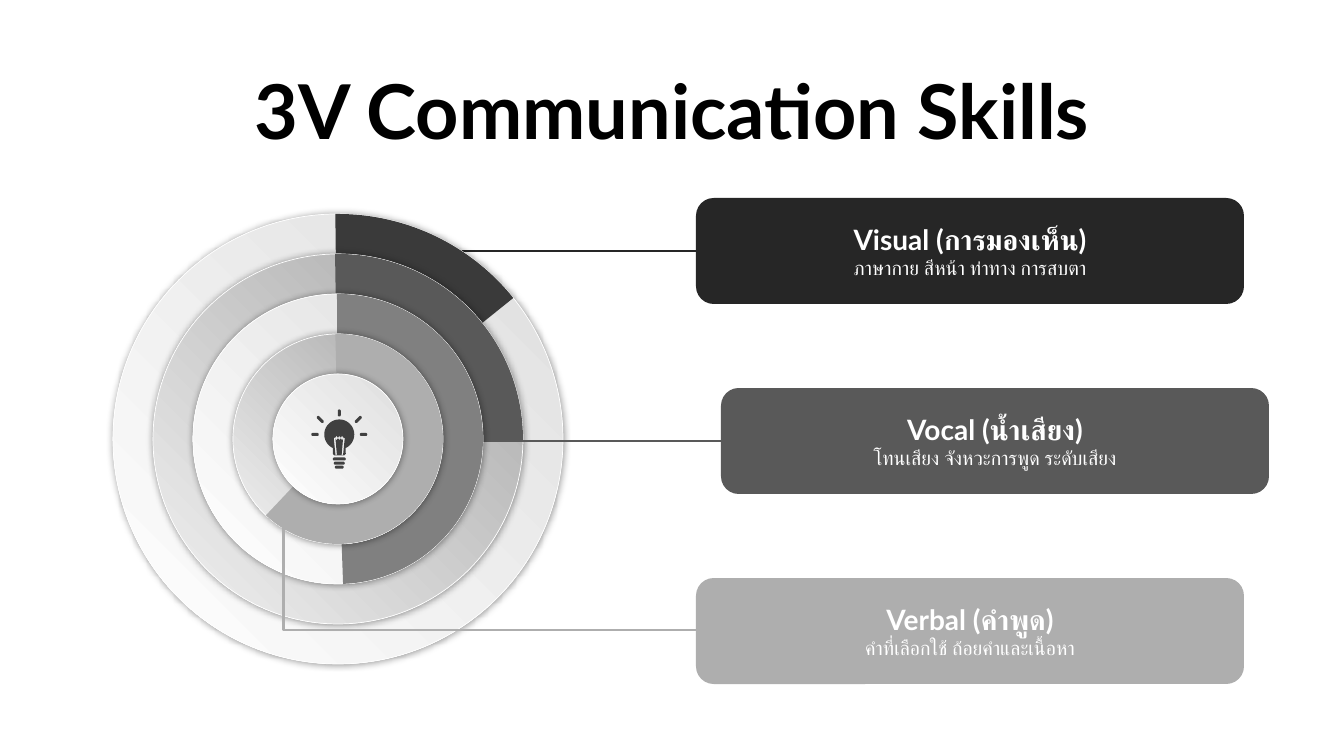
"""Build the 3V Communication Skills slide."""
from math import atan2, cos, degrees, radians, sin

from lxml.etree import SubElement
from pptx import Presentation
from pptx.dml.color import RGBColor
from pptx.enum.shapes import MSO_CONNECTOR, MSO_SHAPE
from pptx.enum.text import MSO_ANCHOR, PP_ALIGN
from pptx.oxml.ns import qn
from pptx.util import Pt

TITLE = "3V Communication Skills"
CARDS = [
    ("Visual (การมองเห็น)", "ภาษากาย สีหน้า ท่าทาง การสบตา", 696, "visual"),
    ("Vocal (น้ำเสียง)", "โทนเสียง จังหวะการพูด ระดับเสียง", 721, "vocal"),
    ("Verbal (คำพูด)", "คำที่เลือกใช้ ถ้อยคำและเนื้อหา", 696, "verbal"),
]
RINGS = [
    ("pale", "outer_pie", 269.33, 321.19),
    ("grey", "vocal", 269.1, 0.77),
    ("pale", "inner_pie", 269.61, 87.97),
    ("grey", "verbal", 268.59, 133.32),
    ("pale", None, 0, 0),
]
GRADIENTS = {"pale": ("pale_start", "white"), "grey": ("grey_start", "grey_end")}
COLORS = {
    "black": "000000", "white": "FFFFFF", "visual": "262626", "vocal": "595959",
    "verbal": "AEAEAE", "outer_pie": "3A3A3A", "inner_pie": "808080",
    "pale_start": "DEDEDE", "grey_start": "A6A6A6", "grey_end": "F2F2F2",
    "bulb": "404040",
}
FONT = "Lato"
SCALE = 914400 / 100.8
SLIDE_WIDTH, SLIDE_HEIGHT = 1344, 756
CARD_TOP, CARD_STEP, CARD_WIDTH, CARD_HEIGHT = 198, 190, 548, 106
RING_LEFT, RING_TOP, RING_SIZE, RING_BAND = 113, 214, 450, 40

BULB_X, BULB_Y, BULB_RADIUS = 339.3, 434.5, 15
BULB_STROKES = [
    (-5, 24.5, 5, 24.5), (-4, 28.7, 4, 28.7), (-3, 32.7, 3, 32.7),
    (-26.5, 0, -22, 0), (22, 0, 26.5, 0), (0, -23.5, 0, -19.5),
    (17, -13, 21, -17), (-17, -13, -21, -17),
]
NECK = [(6.5, 19.5), (5, 21), (-5, 21), (-6.5, 19.5)]
FILAMENT_HALF = [
    (0, 1), (-0.8, 3), (-1.8, 3), (-2.8, 1), (-3.8, 3), (-5.5, 3.5), (-3.8, 20.3),
    (-2.4, 20.3), (-3.8, 4.1), (-2.8, 6), (-1.8, 4.1), (-0.8, 4.1), (0, 6),
]

presentation = Presentation()
presentation.slide_width = round(SLIDE_WIDTH * SCALE)
presentation.slide_height = round(SLIDE_HEIGHT * SCALE)
slide = presentation.slides.add_slide(presentation.slide_layouts[6])


def emu(*lengths):
    return [round(length * SCALE) for length in lengths]


def color(name):
    return RGBColor.from_string(COLORS[name])


def add_text(paragraph, text, size, color_name, bold):
    paragraph.alignment = PP_ALIGN.CENTER
    run = paragraph.add_run()
    run.text = text
    run.font.name = FONT
    run.font.size = Pt(size)
    run.font.bold = bold
    run.font.color.rgb = color(color_name)


def add_filled(kind, box, fill):
    shape = slide.shapes.add_shape(kind, *emu(*box))
    shape.shadow.inherit = False
    shape.fill.solid()
    shape.fill.fore_color.rgb = color(fill)
    shape.line.fill.background()
    return shape


def add_line(kind, points, color_name):
    connector = slide.shapes.add_connector(kind, *emu(*points))
    connector.line.color.rgb = color(color_name)
    connector.line.width = Pt(2)
    SubElement(connector.element.spPr, qn("a:effectLst"))
    return connector


def add_card(index, heading, detail, left, fill):
    box = (left, CARD_TOP + CARD_STEP * index, CARD_WIDTH, CARD_HEIGHT)
    frame = add_filled(MSO_SHAPE.ROUNDED_RECTANGLE, box, fill).text_frame
    frame.vertical_anchor = MSO_ANCHOR.MIDDLE
    add_text(frame.paragraphs[0], heading, 20, "white", True)
    add_text(frame.add_paragraph(), detail, 14, "white", False)


def add_ring(index, gradient, pie, start, end):
    inset = RING_BAND * index
    size = RING_SIZE - 2 * inset
    box = (RING_LEFT + inset, RING_TOP + inset, size, size)
    disc = add_filled(MSO_SHAPE.OVAL, box, "white")
    disc.fill.gradient()
    disc.fill.gradient_angle = 225
    for stop, name in zip(disc.fill.gradient_stops, GRADIENTS[gradient]):
        stop.color.rgb = color(name)
    disc.line.color.rgb = color("white")
    disc.line.width = Pt(0.5)
    effects = disc.element.spPr.find(qn("a:effectLst"))
    shadow = SubElement(effects, qn("a:outerShdw"), blurRad=str(Pt(5)), dist="0", dir="0")
    shade = SubElement(shadow, qn("a:srgbClr"), val=COLORS["black"])
    SubElement(shade, qn("a:alpha"), val="40000")
    if pie:
        wedge = add_filled(MSO_SHAPE.PIE, box, pie)
        wedge.adjustments[0] = start * 0.6
        wedge.adjustments[1] = end * 0.6


def arc(x, y, radius, start, end, step=15):
    count = max(1, round((end - start) / step))
    angles = [radians(start + (end - start) * i / count) for i in range(count + 1)]
    return [(x + radius * cos(angle), y + radius * sin(angle)) for angle in angles]


def stroke(x1, y1, x2, y2, radius=1.5):
    angle = degrees(atan2(y2 - y1, x2 - x1))
    return (arc(x2, y2, radius, angle - 90, angle + 90)
            + arc(x1, y1, radius, angle + 90, angle + 270))


def add_bulb():
    glass = arc(0, 0, BULB_RADIUS, 115, 425, 5) + NECK
    filament = FILAMENT_HALF + [(-x, y) for x, y in FILAMENT_HALF[-2:0:-1]]
    contours = [glass, filament] + [stroke(*ends) for ends in BULB_STROKES]
    builder = None
    for contour in contours:
        points = [emu(BULB_X + x, BULB_Y + y) for x, y in contour]
        if builder is None:
            builder = slide.shapes.build_freeform(*points[0])
        else:
            builder.move_to(*points[0])
        builder.add_line_segments(points[1:], close=True)
    bulb = builder.convert_to_shape()
    bulb.shadow.inherit = False
    bulb.fill.solid()
    bulb.fill.fore_color.rgb = color("bulb")
    bulb.line.fill.background()


title = slide.shapes.add_textbox(*emu(0, 59, SLIDE_WIDTH, 102))
title.text_frame.word_wrap = True
add_text(title.text_frame.paragraphs[0], TITLE, 54, "black", True)

for index, card in enumerate(CARDS):
    add_card(index, *card)

add_line(MSO_CONNECTOR.STRAIGHT, (437, 251, 696, 251), "visual")
for index, ring in enumerate(RINGS):
    add_ring(index, *ring)
    if ring[1] == "vocal":
        add_line(MSO_CONNECTOR.STRAIGHT, (481, 441, 721, 441), "vocal")

elbow = add_line(MSO_CONNECTOR.ELBOW, (696, 630, 279, 524), "verbal")
geometry = elbow.element.spPr.find(qn("a:prstGeom"))
guides = geometry.find(qn("a:avLst"))
SubElement(guides, qn("a:gd"), name="adj1", fmla="val 99000")
add_bulb()

presentation.save("out.pptx")
